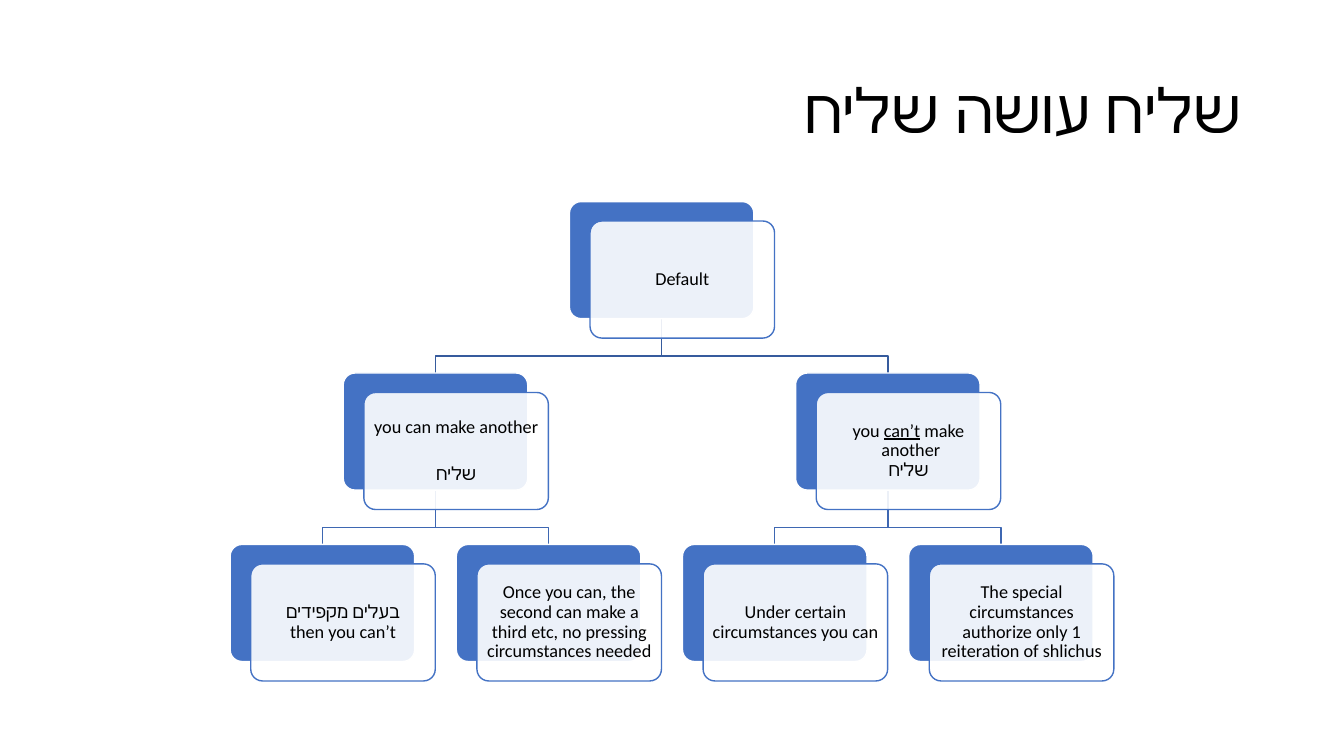
from lxml.etree import SubElement
from pptx import Presentation
from pptx.dml.color import RGBColor
from pptx.enum.shapes import MSO_SHAPE
from pptx.enum.text import MSO_ANCHOR, PP_ALIGN
from pptx.oxml.ns import qn
from pptx.util import Cm, Pt

BLUE = RGBColor(0x44, 0x72, 0xC4)
WHITE = RGBColor(0xFF, 0xFF, 0xFF)
BLACK = RGBColor(0, 0, 0)
LINKS = [RGBColor(0x36, 0x5B, 0x9D), RGBColor(0x3E, 0x67, 0xB2)]

CARD_W, CARD_H = Cm(4.65), Cm(2.95)
SHIFT_X, SHIFT_Y = Cm(0.52), Cm(0.49)
STEP, BEND = Cm(4.32), Cm(0.94)
INSET = Cm(0.13)

# Each node: lines of (text, underlined) parts, then its children
TREE = ([[("Default", False)]], [
    ([[("you can make another ", False)], [("שליח", False)]], [
        ([[("בעלים מקפידים", False)], [("then you can’t", False)]], []),
        ([[("Once you can, the second can make a third etc, "
            "no pressing circumstances needed", False)]], []),
    ]),
    ([[("you ", False), ("can’t", True), (" make another ", False)],
      [("שליח", False)]], [
        ([[("Under certain circumstances you can", False)]], []),
        ([[("The special circumstances authorize only 1 "
            "reiteration of shlichus", False)]], []),
    ]),
])


def apply(item, style):
    for name, value in style.items():
        setattr(item, name, value)


def write(frame, lines, size, align):
    """Fill a frame with one right-to-left paragraph."""
    apply(frame, {"word_wrap": True, "vertical_anchor": MSO_ANCHOR.MIDDLE})
    para = frame.paragraphs[0]
    apply(para, {"alignment": align, "line_spacing": 0.9})
    para._p.get_or_add_pPr().set("rtl", "1")
    for row, parts in enumerate(lines):
        if row:
            para.add_line_break()
        for text, under in parts:
            run = para.add_run()
            run.text = text
            apply(run.font, {"size": Pt(size), "name": "Calibri",
                             "underline": under or None})
            run.font.color.rgb = BLACK


def add_title(slide, x, y, w, h):
    box = slide.shapes.add_textbox(x, y, w, h)
    write(box.text_frame, [[("שליח עושה שליח", False)]], 44, PP_ALIGN.RIGHT)


def add_plate(slide, x, y, fill, edge):
    plate = slide.shapes.add_shape(
        MSO_SHAPE.ROUNDED_RECTANGLE, x, y, CARD_W, CARD_H)
    plate.adjustments[0] = 0.1
    plate.shadow.inherit = False
    plate.fill.solid()
    plate.fill.fore_color.rgb = fill
    plate.line.color.rgb = edge
    plate.line.width = Pt(1)
    return plate


def add_card(slide, x, y, lines):
    add_plate(slide, x, y, BLUE, WHITE)
    front = add_plate(slide, x + SHIFT_X, y + SHIFT_Y, WHITE, BLUE)
    # Let the blue plate show faintly through the front one
    color = front.fill._xPr.find(qn("a:solidFill"))[0]
    SubElement(color, qn("a:alpha")).set("val", "90000")
    frame = front.text_frame
    apply(frame, {"margin_" + side: INSET
                  for side in ("left", "right", "top", "bottom")})
    write(frame, lines, 13, PP_ALIGN.CENTER)


def add_link(slide, x, y, end, color):
    """Draw an elbow from the foot of a card to the head of its child."""
    pen = slide.shapes.build_freeform(x, y)
    pen.add_line_segments(
        [(x, y + BEND), (end, y + BEND), (end, y + STEP - CARD_H)],
        close=False)
    link = pen.convert_to_shape()
    link.shadow.inherit = False
    link.fill.background()
    link.line.color.rgb = color
    link.line.width = Pt(1)


def place(node, x, y, span, depth=0):
    """List every node with its place; the spread halves at each level."""
    lines, kids = node
    spots = [(x + side * span, kid) for side, kid in zip((-1, 1), kids)]
    found = [(lines, x, y, [end for end, kid in spots], depth)]
    for end, kid in spots:
        found += place(kid, end, y + STEP, span // 2, depth + 1)
    return found


def add_tree(slide, x, y, span):
    cards = place(TREE, x, y, span)
    # Links lie behind all cards
    for lines, left, top, ends, depth in cards:
        for end in ends:
            half = CARD_W // 2
            add_link(slide, left + half, top + CARD_H, end + half,
                     LINKS[depth])
    for lines, left, top, ends, depth in cards:
        add_card(slide, left, top, lines)


def main():
    deck = Presentation()
    apply(deck, {"slide_width": Cm(33.87), "slide_height": Cm(19.05)})
    slide = deck.slides.add_slide(deck.slide_layouts[6])
    add_title(slide, Cm(2.33), Cm(1.01), Cm(29.21), Cm(3.68))
    add_tree(slide, Cm(14.35), Cm(5.08), Cm(5.7))
    deck.save("out.pptx")


if __name__ == "__main__":
    main()
